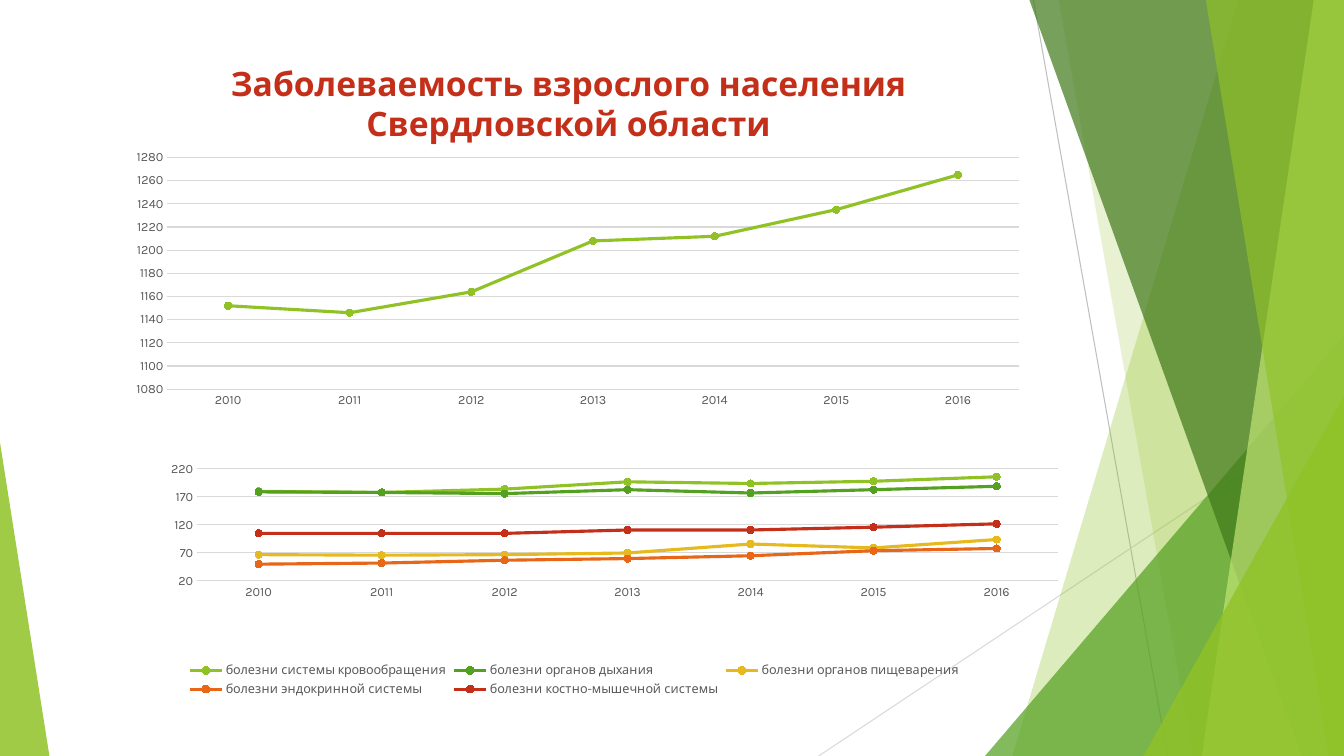
import pptx
import pptx.chart.data
import pptx.dml.color
import pptx.enum.chart
import pptx.enum.shapes
import pptx.enum.text
import pptx.oxml
import pptx.oxml.ns
import pptx.util
from lxml import etree
from pptx.util import Inches

FONT = "Karla"
LIME, GREEN, RED = "90C226", "54A021", "C42F1A"
YEARS = [str(year) for year in range(2010, 2017)]
TOTAL = [("Series 1", LIME, (1152, 1146, 1164, 1208, 1212, 1235, 1265))]
DISEASES = [
    ("болезни системы кровообращения", LIME, (180, 178, 184, 197, 194, 198, 206)),
    ("болезни органов дыхания", GREEN, (179, 178, 176, 183, 177, 183, 189)),
    ("болезни органов пищеварения", "E6B91E", (67, 66, 67, 70, 86, 79, 94)),
    ("болезни эндокринной системы", "E76618", (50, 52, 57, 60, 65, 74, 78)),
    ("болезни костно-мышечной системы", RED, (105, 105, 105, 111, 111, 116, 122)),
]


def rgb(color):
    return pptx.dml.color.RGBColor.from_string(color)


def style_line(line, color, width):
    line.color.rgb = rgb(color)
    line.width = pptx.util.Pt(width)


def style_font(font, size, color):
    font.name = FONT
    font.size = pptx.util.Pt(size)
    font.color.rgb = rgb(color)


def add_line(s, x1, y1, x2, y2, color):
    line = s.shapes.add_connector(
        pptx.enum.shapes.MSO_CONNECTOR.STRAIGHT,
        Inches(x1), Inches(y1), Inches(x2), Inches(y2))
    style_line(line.line, color, 0.75)
    etree.SubElement(line._element.spPr, pptx.oxml.ns.qn("a:effectLst"))


def fill_shape(sp, color, opacity):
    sp.shadow.inherit = False
    sp.line.fill.background()
    sp.fill.solid()
    sp.fill.fore_color.rgb = rgb(color)
    srgb = sp._element.spPr.find(".//" + pptx.oxml.ns.qn("a:srgbClr"))
    alpha = etree.SubElement(srgb, pptx.oxml.ns.qn("a:alpha"))
    alpha.set("val", str(opacity * 1000))


def add_band(s, top_x, bottom_x, color, opacity):
    right, bottom = Inches(13.33), Inches(7.5)
    builder = s.shapes.build_freeform(Inches(top_x), 0)
    builder.add_line_segments([(right, 0), (right, bottom), (Inches(bottom_x), bottom)])
    fill_shape(builder.convert_to_shape(), color, opacity)


def add_triangle(s, x, y, w, h, apex, color, opacity):
    sp = s.shapes.add_shape(
        pptx.enum.shapes.MSO_SHAPE.ISOSCELES_TRIANGLE,
        Inches(x), Inches(y), Inches(w), Inches(h))
    sp.adjustments[0] = apex
    fill_shape(sp, color, opacity)


def set_plot_layout(chart, x, y, w, h):
    plot_area = chart._chartSpace.chart.plotArea
    for old in plot_area.findall(pptx.oxml.ns.qn("c:layout")):
        plot_area.remove(old)
    layout = etree.Element(pptx.oxml.ns.qn("c:layout"))
    manual = etree.SubElement(layout, pptx.oxml.ns.qn("c:manualLayout"))
    for tag, value in (("layoutTarget", "inner"), ("xMode", "edge"), ("yMode", "edge"),
                       ("x", x), ("y", y), ("w", w), ("h", h)):
        etree.SubElement(manual, pptx.oxml.ns.qn("c:" + tag)).set("val", str(value))
    plot_area.insert(0, layout)


def style_axes(chart, low, high, step):
    for axis in (chart.category_axis, chart.value_axis):
        axis.major_tick_mark = pptx.enum.chart.XL_TICK_MARK.NONE
        axis.minor_tick_mark = pptx.enum.chart.XL_TICK_MARK.NONE
        style_font(axis.tick_labels.font, 9, "595959")
    style_line(chart.category_axis.format.line, "D9D9D9", 0.75)
    values = chart.value_axis
    values.minimum_scale, values.maximum_scale, values.major_unit = low, high, step
    values.format.line.fill.background()
    style_line(values.major_gridlines.format.line, "D9D9D9", 0.75)


def style_series(series, color):
    series.smooth = False
    style_line(series.format.line, color, 2.25)
    marker = series.marker
    marker.style = pptx.enum.chart.XL_MARKER_STYLE.CIRCLE
    marker.size = 5
    marker.format.fill.solid()
    marker.format.fill.fore_color.rgb = rgb(color)
    style_line(marker.format.line, color, 0.75)


def add_line_chart(s, box, rows, scale, plot, legend=False):
    data = pptx.chart.data.CategoryChartData()
    data.categories = YEARS
    for name, _, values in rows:
        data.add_series(name, values)
    chart = s.shapes.add_chart(
        pptx.enum.chart.XL_CHART_TYPE.LINE_MARKERS, *map(Inches, box), data).chart
    style_font(chart.font, 10, "000000")
    chart.has_title = False
    chart.has_legend = legend
    if legend:
        chart.legend.position = pptx.enum.chart.XL_LEGEND_POSITION.BOTTOM
        chart.legend.include_in_layout = False
        style_font(chart.legend.font, 9, "595959")
    chart.plots[0].vary_by_categories = False
    style_axes(chart, *scale)
    for series, (_, color, _) in zip(chart.plots[0].series, rows):
        style_series(series, color)
    set_plot_layout(chart, *plot)


def add_title(s, x, y, w, h, text):
    tf = s.shapes.add_textbox(Inches(x), Inches(y), Inches(w), Inches(h)).text_frame
    tf.word_wrap = True
    p = tf.paragraphs[0]
    p.alignment = pptx.enum.text.PP_ALIGN.CENTER
    r = p.add_run()
    r.text = text
    r.font.bold = True
    style_font(r.font, 24, RED)


def add_backdrop(s):
    add_line(s, 10.25, 0, 11.58, 7.5, "BFBFBF")
    add_line(s, 13.33, 4.03, 8.12, 7.5, "D9D9D9")
    add_band(s, 12.28, 10.04, LIME, 30)
    add_band(s, 10.5, 11.83, LIME, 20)
    add_triangle(s, 9.77, 3.33, 3.56, 4.17, 1, GREEN, 72)
    add_band(s, 10.21, 12.91, "3F7819", 70)
    add_band(s, 13.03, 11.92, "C0E474", 70)
    add_band(s, 11.96, 13.18, LIME, 65)
    add_triangle(s, 11.34, 3.93, 1.99, 3.57, 1, LIME, 80)
    add_triangle(s, 0, 4.39, 0.49, 3.11, 0, LIME, 85)


def main():
    prs = pptx.Presentation()
    prs.slide_width, prs.slide_height = Inches(13.33), Inches(7.5)
    s = prs.slides.add_slide(prs.slide_layouts[6])
    add_backdrop(s)
    add_line_chart(s, (0.9, 1.48, 9.49, 2.77), TOTAL, (1080, 1280, 20),
                   (0.08, 0.03, 0.89, 0.83))
    add_line_chart(s, (0.9, 4.48, 9.6, 2.47), DISEASES, (20, 220, 50),
                   (0.11, 0.07, 0.89, 0.45), legend=True)
    add_title(s, 1.08, 0.57, 9.12, 0.91,
              "Заболеваемость взрослого населения Свердловской области")
    prs.save("out.pptx")


if __name__ == "__main__":
    main()
